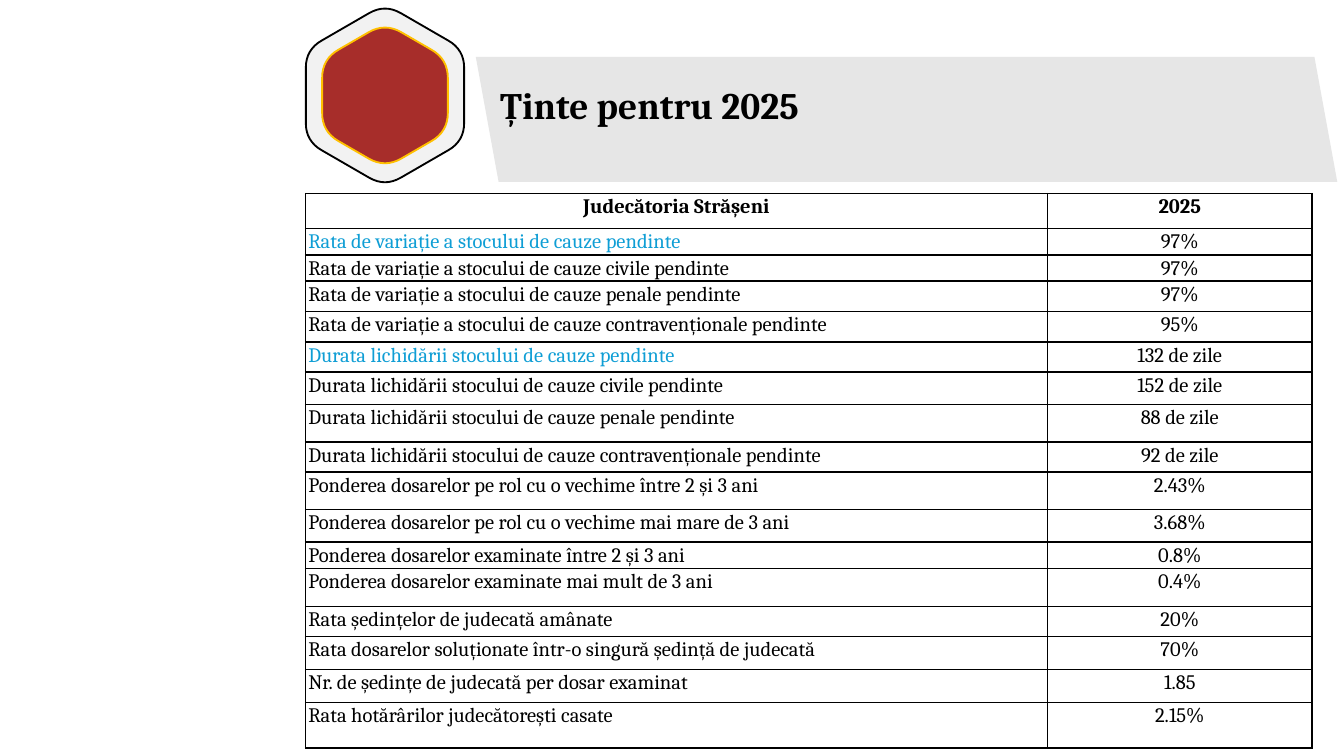
from dataclasses import dataclass
from math import cos, pi, sin

from lxml.etree import SubElement
from pptx import Presentation
from pptx.dml.color import RGBColor
from pptx.enum.text import MSO_ANCHOR as Anchor, PP_ALIGN as Align
from pptx.oxml.ns import qn
from pptx.util import Emu, Inches, Pt

SLIDE_WIDTH = Inches(10)
SLIDE_HEIGHT = Emu(SLIDE_WIDTH * 9 // 16)
GRID_COLUMNS = 1000
BLACK, ACCENT = "000000", "0F9ED5"
FONT = "Cambria"
CURVE_STEPS = 8

Point = tuple[float, float]


@dataclass(frozen=True)
class Hexagon:
    radius: float
    corner: float
    fill: str
    line: str


@dataclass(frozen=True)
class Target:
    name: str
    value: str
    height: float
    color: str = BLACK


BANNER = [(354, 42.4), (978, 42.4), (995, 135.4), (371, 135.4)]
BADGE_CENTER = (286.5, 71)
HEXAGONS = [
    Hexagon(68, 13.5, "F2F2F2", BLACK),
    Hexagon(54, 14, "A72D2A", "FFC000"),
]
HEADER = Target("Judecătoria Strășeni", "2025", 26)
TARGETS = [
    Target("Rata de variație a stocului de cauze pendinte", "97%", 19, ACCENT),
    Target("Rata de variație a stocului de cauze civile pendinte", "97%", 19),
    Target("Rata de variație a stocului de cauze penale pendinte", "97%", 22.4),
    Target("Rata de variație a stocului de cauze contravenționale pendinte", "95%", 23),
    Target("Durata lichidării stocului de cauze pendinte", "132 de zile", 22.4, ACCENT),
    Target("Durata lichidării stocului de cauze civile pendinte", "152 de zile", 24),
    Target("Durata lichidării stocului de cauze penale pendinte", "88 de zile", 27.8),
    Target("Durata lichidării stocului de cauze contravenționale pendinte", "92 de zile", 22.4),
    Target("Ponderea dosarelor pe rol cu o vechime între 2 și 3 ani", "2.43%", 28),
    Target("Ponderea dosarelor pe rol cu o vechime mai mare de 3 ani", "3.68%", 24.4),
    Target("Ponderea dosarelor examinate între 2 și 3 ani", "0.8%", 19),
    Target("Ponderea dosarelor examinate mai mult de 3 ani", "0.4%", 28),
    Target("Rata ședințelor de judecată amânate", "20%", 22.4),
    Target("Rata dosarelor soluționate într-o singură ședință de judecată", "70%", 24.7),
    Target("Nr. de ședințe de judecată per dosar examinat", "1.85", 24.4),
    Target("Rata hotărârilor judecătorești casate", "2.15%", 34),
]
TABLE_LEFT, TABLE_TOP = 227.4, 144
TABLE_COLUMNS = [552, 197]


def grid(units: float) -> Emu:
    return Emu(round(units * SLIDE_WIDTH / GRID_COLUMNS))


def color_of(value: str) -> RGBColor:
    return RGBColor.from_string(value)


def apply(target, formats: dict) -> None:
    for name, value in formats.items():
        setattr(target, name, value)


def write(para, text: str, size: float, color: str, bold: bool, formats: dict) -> None:
    apply(para, formats)
    span = para.add_run()
    span.text = text
    apply(span.font, {"name": FONT, "size": Pt(size), "bold": bold})
    span.font.color.rgb = color_of(color)


def draw_outline(page, points: list[Point], fill: str, line: str | None = None) -> None:
    corners = [(grid(x), grid(y)) for x, y in points]
    builder = page.shapes.build_freeform(*corners[0], scale=1.0)
    builder.add_line_segments(corners[1:], close=True)
    shape = builder.convert_to_shape()
    shape.shadow.inherit = False
    shape.fill.solid()
    shape.fill.fore_color.rgb = color_of(fill)
    if line is None:
        shape.line.fill.background()
    else:
        shape.line.color.rgb = color_of(line)
        shape.line.width = Pt(1)


def hexagon_points(hexagon: Hexagon, center: Point) -> list[Point]:
    vertices = [
        (center[0] + hexagon.radius * sin(turn * pi / 3),
         center[1] - hexagon.radius * cos(turn * pi / 3))
        for turn in range(6)
    ]
    share = hexagon.corner / hexagon.radius
    points = []
    for index, vertex in enumerate(vertices):
        before, after = vertices[index - 1], vertices[(index + 1) % 6]
        for step in range(CURVE_STEPS + 1):
            t = step / CURVE_STEPS
            points.append(tuple(
                v + share * ((1 - t) ** 2 * (b - v) + t ** 2 * (a - v))
                for v, b, a in zip(vertex, before, after)
            ))
    return points


def draw_title(page, text: str) -> None:
    box = page.shapes.add_textbox(grid(362.4), grid(51), grid(633), grid(46))
    box.text_frame.word_wrap = True
    write(box.text_frame.paragraphs[0], text, 20, BLACK, True,
          {"line_spacing": 1.15, "space_after": Pt(10)})


def frame_cell(cell) -> None:
    properties = cell._tc.get_or_add_tcPr()
    for position, side in enumerate(("a:lnL", "a:lnR", "a:lnT", "a:lnB")):
        border = SubElement(properties, qn(side), w=str(Pt(1)))
        fill = SubElement(border, qn("a:solidFill"))
        SubElement(fill, qn("a:srgbClr"), val=BLACK)
        properties.insert(position, border)


def fill_cell(cell, text: str, color: str, bold: bool, align: Align) -> None:
    apply(cell, {
        "margin_left": grid(2), "margin_right": grid(2),
        "margin_top": 0, "margin_bottom": 0, "vertical_anchor": Anchor.TOP,
    })
    cell.fill.background()
    frame_cell(cell)
    write(cell.text_frame.paragraphs[0], text, 11, color, bold,
          {"alignment": align, "line_spacing": 1.07, "space_after": Pt(8)})


def draw_table(page, header: Target, targets: list[Target]) -> None:
    rows = [header, *targets]
    table = page.shapes.add_table(
        len(rows), len(TABLE_COLUMNS), grid(TABLE_LEFT), grid(TABLE_TOP),
        grid(sum(TABLE_COLUMNS)), grid(sum(row.height for row in rows))).table
    apply(table, {"first_row": False, "horz_banding": False})
    for column, width in zip(table.columns, TABLE_COLUMNS):
        column.width = grid(width)
    for index, row in enumerate(rows):
        is_header = row is header
        table.rows[index].height = grid(row.height)
        fill_cell(table.cell(index, 0), row.name, row.color, is_header,
                  Align.CENTER if is_header else Align.JUSTIFY)
        fill_cell(table.cell(index, 1), row.value, BLACK, is_header, Align.CENTER)


def main() -> None:
    deck = Presentation()
    apply(deck, {"slide_width": SLIDE_WIDTH, "slide_height": SLIDE_HEIGHT})
    page = deck.slides.add_slide(deck.slide_layouts[6])
    draw_outline(page, BANNER, "E6E6E6")
    draw_title(page, "Ținte pentru 2025")
    for hexagon in HEXAGONS:
        draw_outline(page, hexagon_points(hexagon, BADGE_CENTER), hexagon.fill, hexagon.line)
    draw_table(page, HEADER, TARGETS)
    deck.save("out.pptx")


if __name__ == "__main__":
    main()
